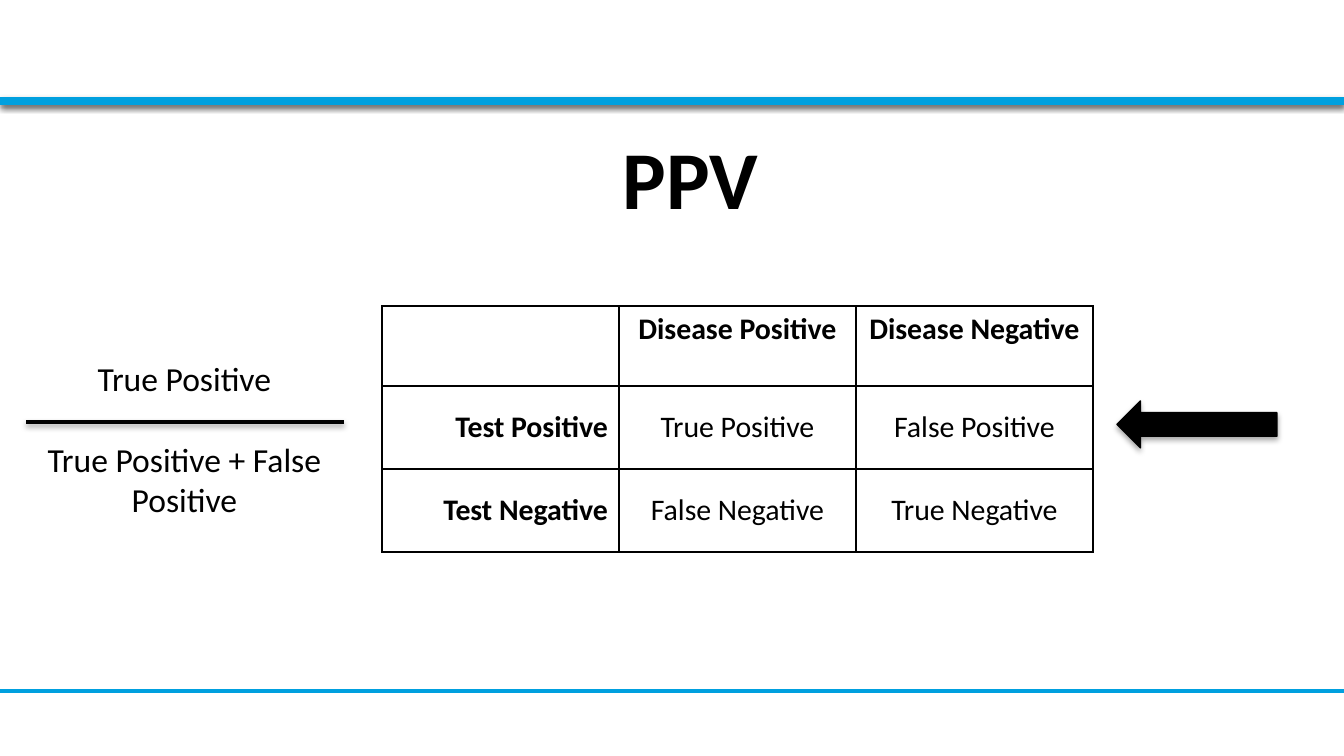
"""Build the PPV slide: formula, test-by-disease table and row arrow."""
from pptx import Presentation
from pptx.dml.color import RGBColor
from pptx.enum.shapes import MSO_CONNECTOR, MSO_SHAPE
from pptx.enum.text import MSO_ANCHOR, PP_ALIGN
from pptx.oxml import parse_xml
from pptx.oxml.ns import nsdecls
from pptx.util import Emu, Pt

BLACK = RGBColor(0x00, 0x00, 0x00)
WHITE = RGBColor(0xFF, 0xFF, 0xFF)
BLUE = RGBColor(0x00, 0xA0, 0xDF)
FONT = "Calibri"
STRAIGHT = MSO_CONNECTOR.STRAIGHT
RECTANGLE, LEFT_ARROW = MSO_SHAPE.RECTANGLE, MSO_SHAPE.LEFT_ARROW
CENTER, RIGHT = PP_ALIGN.CENTER, PP_ALIGN.RIGHT
TOP, MIDDLE = MSO_ANCHOR.TOP, MSO_ANCHOR.MIDDLE

WIDTH, HEIGHT = 1344, 756
TITLE = "PPV"
FORMULA = ["True Positive", "True Positive + False Positive"]
TABLE = [
    ["", "Disease Positive", "Disease Negative"],
    ["Test Positive", "True Positive", "False Positive"],
    ["Test Negative", "False Negative", "True Negative"],
]
COLUMN_WIDTH = 237
ROW_HEIGHTS = [80, 83, 83]
TABLE_LEFT, TABLE_TOP = 382, 306
SHAPE_SHADOW = (35, 1.8)
LINE_SHADOW = (38, 1.6)


def px(value):
    return Emu(round(value * 914400 / 134.4))


def box(*lengths):
    return [px(length) for length in lengths]


def set_shadow(shape, shadow):
    effects = ""
    if shadow:
        opacity, distance = shadow
        effects = (
            f'<a:outerShdw blurRad="{Pt(3.1)}" dist="{Pt(distance)}" dir="5400000" '
            f'rotWithShape="0"><a:srgbClr val="{BLACK}"><a:alpha val="{opacity * 1000}"/>'
            "</a:srgbClr></a:outerShdw>"
        )
    shape._element.spPr.append(
        parse_xml(f"<a:effectLst {nsdecls('a')}>{effects}</a:effectLst>"))


def add_line(slide, start, end, y, color, width, shadow=None):
    line = slide.shapes.add_connector(STRAIGHT, *box(start, y, end, y))
    line.line.color.rgb = color
    line.line.width = Pt(width)
    set_shadow(line, shadow)


def add_shape(slide, kind, bounds, color, outline=None):
    shape = slide.shapes.add_shape(kind, *box(*bounds))
    shape.fill.solid()
    shape.fill.fore_color.rgb = color
    if outline:
        shape.line.color.rgb = color
        shape.line.width = Pt(outline)
    else:
        shape.line.fill.background()
    set_shadow(shape, SHAPE_SHADOW)


def format_paragraph(paragraph, text, size, bold=False, alignment=CENTER):
    paragraph.text = text
    paragraph.alignment = alignment
    font = paragraph.font
    font.name, font.size, font.bold = FONT, Pt(size), bold
    font.color.rgb = BLACK


def add_borders(cell):
    properties = cell._tc.get_or_add_tcPr()
    for side in ("lnL", "lnR", "lnT", "lnB"):
        properties.append(parse_xml(
            f'<a:{side} {nsdecls("a")} w="{Pt(1)}"><a:solidFill>'
            f'<a:srgbClr val="{BLACK}"/></a:solidFill></a:{side}>'))


def add_table(slide):
    bounds = box(TABLE_LEFT, TABLE_TOP, COLUMN_WIDTH * len(TABLE[0]), sum(ROW_HEIGHTS))
    table = slide.shapes.add_table(len(TABLE), len(TABLE[0]), *bounds).table
    table.first_row = table.horz_banding = False
    for column in table.columns:
        column.width = px(COLUMN_WIDTH)
    for row_index, texts in enumerate(TABLE):
        table.rows[row_index].height = px(ROW_HEIGHTS[row_index])
        for column_index, text in enumerate(texts):
            cell = table.cell(row_index, column_index)
            add_borders(cell)
            cell.fill.background()
            cell.margin_left = cell.margin_right = px(11)
            cell.margin_top = cell.margin_bottom = px(5)
            cell.vertical_anchor = MIDDLE if row_index else TOP
            format_paragraph(
                cell.text_frame.paragraphs[0], text, 16,
                bold=row_index == 0 or column_index == 0,
                alignment=CENTER if column_index else RIGHT)


def add_formula(slide):
    frame = slide.shapes.add_textbox(*box(26, 351, 317, 176)).text_frame
    frame.word_wrap = True
    numerator, denominator = frame.paragraphs[0], frame.add_paragraph()
    for paragraph, text in zip((numerator, denominator), FORMULA):
        format_paragraph(paragraph, text, 18)
    denominator.space_before = Pt(22)
    add_line(slide, 344, 26, 422, BLACK, 2, LINE_SHADOW)


def main():
    presentation = Presentation()
    presentation.slide_width, presentation.slide_height = px(WIDTH), px(HEIGHT)
    slide = presentation.slides.add_slide(presentation.slide_layouts[5])

    add_shape(slide, RECTANGLE, (0, 0, WIDTH, 103), WHITE)
    add_line(slide, 0, WIDTH, 691, BLUE, 2)
    add_line(slide, 0, WIDTH, 101, BLUE, 4.5, LINE_SHADOW)

    title = slide.shapes.title
    title.left, title.top, title.width, title.height = box(86, 114, 1209, 126)
    title.text_frame.vertical_anchor = MIDDLE
    format_paragraph(title.text_frame.paragraphs[0], TITLE, 44, bold=True)

    add_table(slide)
    add_shape(slide, LEFT_ARROW, (1117, 401, 160, 47), BLACK, outline=0.75)
    add_formula(slide)
    presentation.save("out.pptx")


if __name__ == "__main__":
    main()
